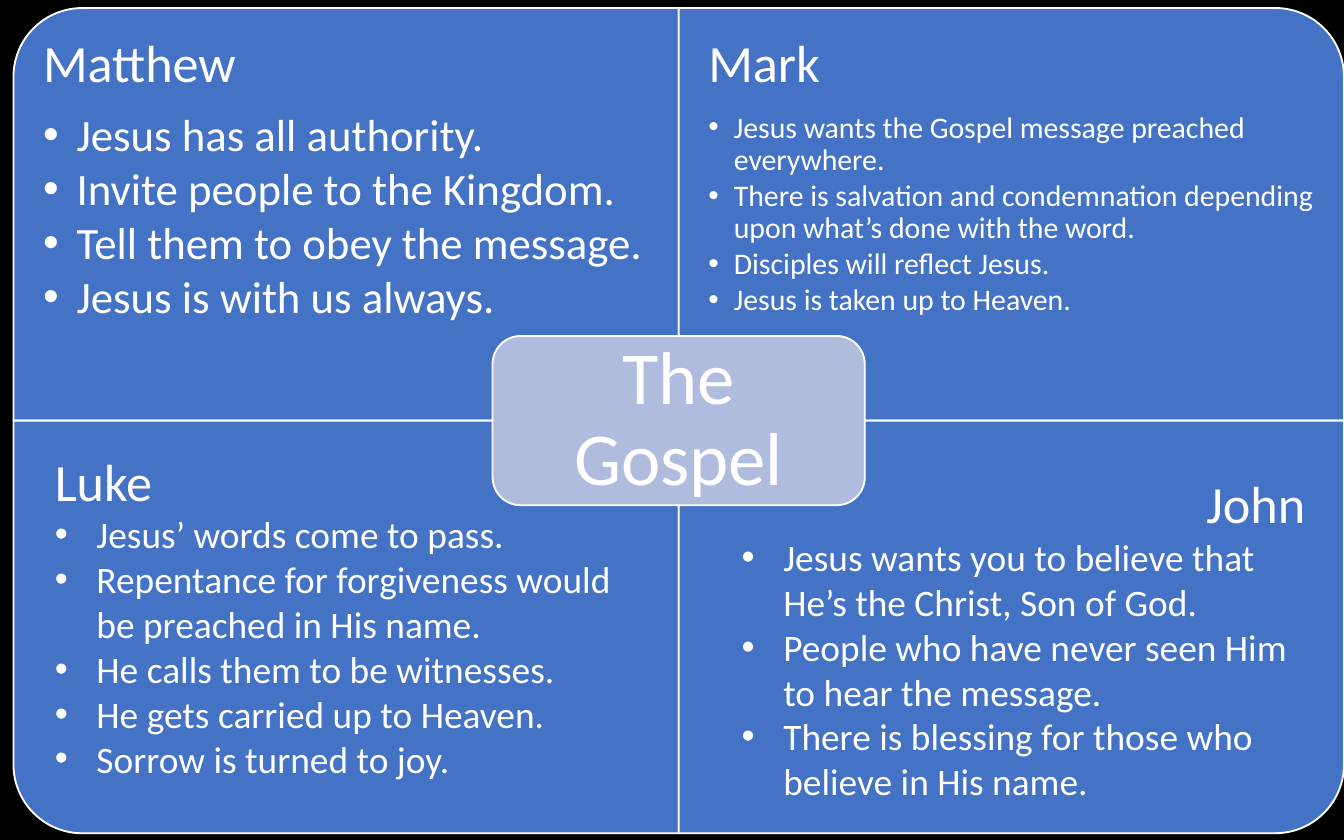
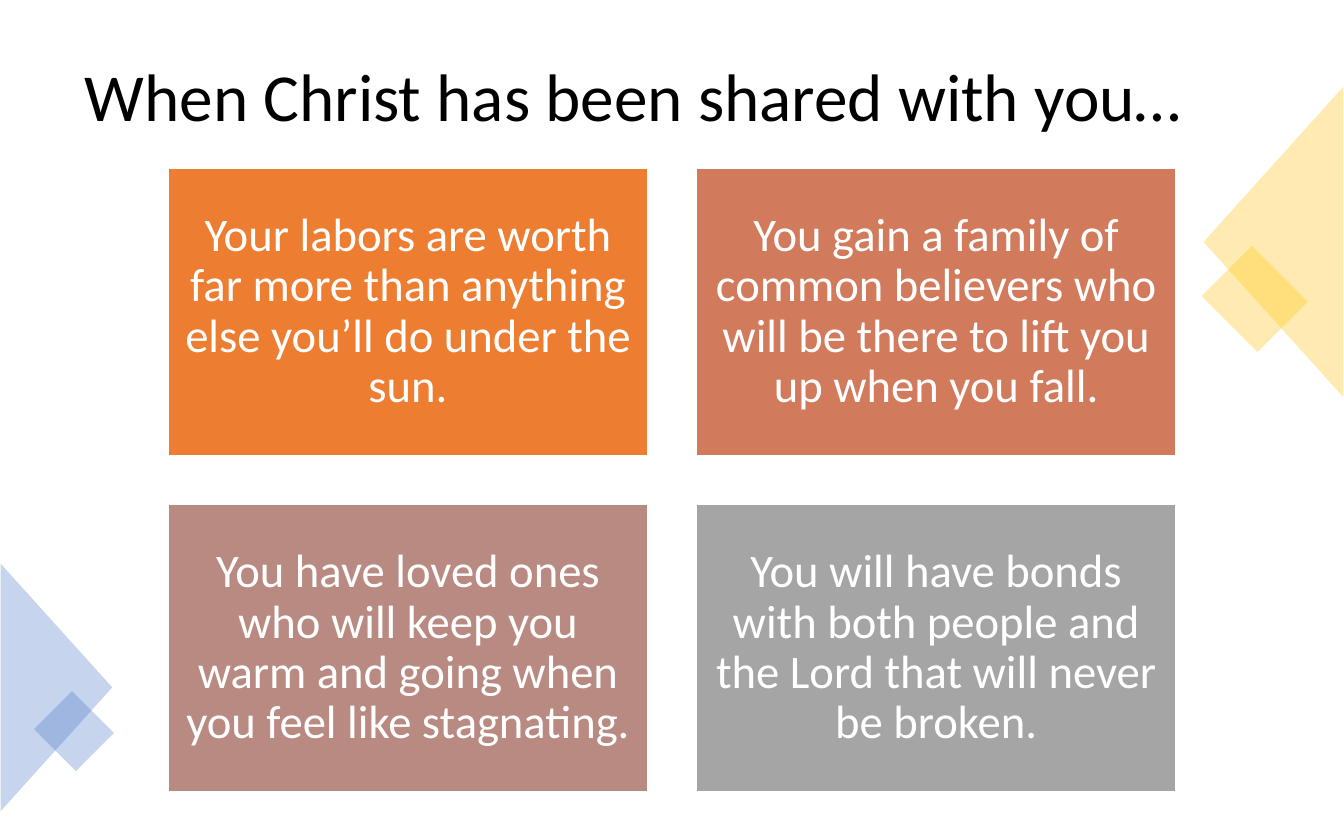
from dataclasses import dataclass

from lxml.etree import SubElement
from pptx import Presentation
from pptx.dml.color import RGBColor
from pptx.enum.shapes import MSO_SHAPE
from pptx.enum.text import MSO_ANCHOR, MSO_AUTO_SIZE, PP_ALIGN
from pptx.oxml.ns import qn
from pptx.util import Inches, Pt


@dataclass(frozen=True)
class Theme:
    font: str = "Calibri"
    white: str = "FFFFFF"
    black: str = "000000"
    blue: str = "4472C4"
    pale_blue: str = "B0BCDE"
    gold: str = "FFC000"
    heading: float = 28
    hub: float = 40
    title: float = 36
    tile: float = 25
    outline: float = 1
    tight: float = 0.9
    ornament_opacity: int = 30


THEME = Theme()
WIDTH, HEIGHT = 10, 6.25

# Quadrants of the first slide, by row; the rotation turns the round corner outwards.
PANEL_LEFT, PANEL_TOP, PANEL_WIDTH, PANEL_HEIGHT = 0.1, 0.06, 4.95, 3.07
PANEL_ROTATIONS = [270, 0, 180, 90]
TIGHT_LIST = dict(insets=(0.22, 0.22), line_spacing=THEME.tight, after_heading=0.35, after_item=0.13)
PLAIN_LIST = dict(insets=(0.1, 0.05), auto_size=MSO_AUTO_SIZE.SHAPE_TO_FIT_TEXT)
GOSPELS = [
    dict(
        name="Matthew", area=(PANEL_LEFT, PANEL_TOP, PANEL_WIDTH, 2.3), size=24, indent=0.25,
        points=[
            "Jesus has all authority.",
            "Invite people to the Kingdom.",
            "Tell them to obey the message.",
            "Jesus is with us always.",
        ], **TIGHT_LIST),
    dict(
        name="Mark", area=(PANEL_LEFT + PANEL_WIDTH, PANEL_TOP, PANEL_WIDTH, 2.3), size=16, indent=0.19,
        points=[
            "Jesus wants the Gospel message preached everywhere.",
            "There is salvation and condemnation depending upon what’s done with the word.",
            "Disciples will reflect Jesus.",
            "Jesus is taken up to Heaven.",
        ], **TIGHT_LIST),
    dict(
        name="Luke", area=(0.31, 3.29, 4.6, 2.59), size=20, indent=0.31,
        points=[
            "Jesus’ words come to pass.",
            "Repentance for forgiveness would be preached in His name.",
            "He calls them to be witnesses.",
            "He gets carried up to Heaven.",
            "Sorrow is turned to joy.",
        ], **PLAIN_LIST),
    dict(
        name="John", area=(5.42, 3.46, 4.39, 2.59), size=20, indent=0.31, heading_align=PP_ALIGN.RIGHT,
        points=[
            "Jesus wants you to believe that He’s the Christ, Son of God.",
            "People who have never seen Him to hear the message.",
            "There is blessing for those who believe in His name.",
        ], **PLAIN_LIST),
]
HUB_TEXT, HUB_WIDTH, HUB_HEIGHT = "The Gospel", 2.77, 1.26

TITLE = "When Christ has been shared with you…"
TITLE_AREA = (0.53, 0.22, 8.94, 1.04)
TILES = [
    ("Your labors are worth far more than anything else you’ll do under the sun.", "ED7D31"),
    ("You gain a family of common believers who will be there to lift you up when you fall.", "D17B5C"),
    ("You have loved ones who will keep you warm and going when you feel like stagnating.", "B98A82"),
    ("You will have bonds with both people and the Lord that will never be broken.", "A5A5A5"),
]
TILE_LEFT, TILE_TOP, TILE_GAP = WIDTH / 8, HEIGHT / 5, 0.36
TILE_WIDTH = (WIDTH - 2 * TILE_LEFT - TILE_GAP) / 2
TILE_HEIGHT = 0.6 * TILE_WIDTH
ORNAMENTS = [
    (MSO_SHAPE.RECTANGLE, (9.04, 1.96, 0.59, 0.53), 45, THEME.gold),
    (MSO_SHAPE.ISOSCELES_TRIANGLE, (8.32, 1.28, 2.31, 1.04), 270, THEME.gold),
    (MSO_SHAPE.ISOSCELES_TRIANGLE, (-0.5, 4.7, 1.84, 0.83), 90, THEME.blue),
    (MSO_SHAPE.RECTANGLE, (0.33, 5.24, 0.44, 0.4), 45, THEME.blue),
]


def rgb(color):
    return RGBColor.from_string(color)


def inches(area):
    return [Inches(length) for length in area]


def add_page(deck, layout, background):
    page = deck.slides.add_slide(deck.slide_layouts.get_by_name(layout))
    page.background.fill.solid()
    page.background.fill.fore_color.rgb = rgb(background)
    return page


def add_shape(page, preset, area, color, rotation=0, outlined=True):
    shape = page.shapes.add_shape(preset, *inches(area))
    shape.shadow.inherit = False
    shape.rotation = rotation
    shape.fill.solid()
    shape.fill.fore_color.rgb = rgb(color)
    if outlined:
        shape.line.color.rgb = rgb(THEME.white)
        shape.line.width = Pt(THEME.outline)
    else:
        shape.line.fill.background()
    return shape


def set_frame(frame, insets, **format_values):
    """Apply (horizontal, vertical) insets and any other frame attributes."""
    across, down = inches(insets)
    values = dict(margin_left=across, margin_right=across, margin_top=down, margin_bottom=down,
                  word_wrap=True, **format_values)
    for name, value in values.items():
        setattr(frame, name, value)


def write(para, text, size, color=THEME.white, **format_values):
    for name, value in format_values.items():
        setattr(para, name, value)
    span = para.add_run()
    span.text = text
    span.font.name = THEME.font
    span.font.size = Pt(size)
    span.font.color.rgb = rgb(color)


def add_bullet(para, indent):
    properties = para._p.get_or_add_pPr()
    properties.set("marL", str(Inches(indent)))
    properties.set("indent", str(-Inches(indent)))
    SubElement(properties, qn("a:buFont"), typeface="Arial")
    SubElement(properties, qn("a:buChar"), char="•")


def add_gospel(page, name, area, size, indent, points, insets, line_spacing=1.0, after_heading=0,
               after_item=0, heading_align=PP_ALIGN.LEFT, auto_size=MSO_AUTO_SIZE.NONE):
    """Add a heading with bullets; spaces after are shares of the type size."""
    frame = page.shapes.add_textbox(*inches(area)).text_frame
    set_frame(frame, insets, auto_size=auto_size)
    write(frame.paragraphs[0], name, THEME.heading, alignment=heading_align,
          line_spacing=line_spacing, space_after=Pt(after_heading * THEME.heading))
    for point in points:
        para = frame.add_paragraph()
        add_bullet(para, indent)
        write(para, point, size, line_spacing=line_spacing, space_after=Pt(after_item * size))


def write_centred(shape, text, size, inset):
    set_frame(shape.text_frame, (inset, inset), vertical_anchor=MSO_ANCHOR.MIDDLE)
    write(shape.text_frame.paragraphs[0], text, size,
          alignment=PP_ALIGN.CENTER, line_spacing=THEME.tight)


def add_panel(page, index, rotation):
    """Add a quadrant; a quarter turn swaps the sides about the same centre."""
    row, column = divmod(index, 2)
    center_x = PANEL_LEFT + (column + 0.5) * PANEL_WIDTH
    center_y = PANEL_TOP + (row + 0.5) * PANEL_HEIGHT
    width, height = PANEL_WIDTH, PANEL_HEIGHT
    if rotation % 180:
        width, height = height, width
    area = (center_x - width / 2, center_y - height / 2, width, height)
    add_shape(page, MSO_SHAPE.ROUND_1_RECTANGLE, area, THEME.blue, rotation)


def build_gospels(deck):
    page = add_page(deck, "Blank", THEME.black)
    for index, rotation in enumerate(PANEL_ROTATIONS):
        add_panel(page, index, rotation)
    hub_area = (PANEL_LEFT + PANEL_WIDTH - HUB_WIDTH / 2, PANEL_TOP + PANEL_HEIGHT - HUB_HEIGHT / 2,
                HUB_WIDTH, HUB_HEIGHT)
    hub = add_shape(page, MSO_SHAPE.ROUNDED_RECTANGLE, hub_area, THEME.pale_blue)
    write_centred(hub, HUB_TEXT, THEME.hub, 0.17)
    for gospel in GOSPELS:
        add_gospel(page, **gospel)


def build_blessings(deck):
    page = add_page(deck, "Title Only", THEME.white)
    title = page.shapes.title
    title.left, title.top, title.width, title.height = inches(TITLE_AREA)
    set_frame(title.text_frame, (0.1, 0.05), vertical_anchor=MSO_ANCHOR.MIDDLE)
    write(title.text_frame.paragraphs[0], TITLE, THEME.title, THEME.black,
          alignment=PP_ALIGN.LEFT, line_spacing=THEME.tight)
    for preset, area, rotation, color in ORNAMENTS:
        ornament = add_shape(page, preset, area, color, rotation, outlined=False)
        tint = ornament._element.spPr.find(qn("a:solidFill"))[0]
        SubElement(tint, qn("a:alpha"), val=str(THEME.ornament_opacity * 1000))
    for index, (text, color) in enumerate(TILES):
        row, column = divmod(index, 2)
        area = (TILE_LEFT + column * (TILE_WIDTH + TILE_GAP), TILE_TOP + row * (TILE_HEIGHT + TILE_GAP),
                TILE_WIDTH, TILE_HEIGHT)
        write_centred(add_shape(page, MSO_SHAPE.RECTANGLE, area, color), text, THEME.tile, 0.1)


def main():
    deck = Presentation()
    deck.slide_width, deck.slide_height = inches((WIDTH, HEIGHT))
    build_gospels(deck)
    build_blessings(deck)
    deck.save("out.pptx")


if __name__ == "__main__":
    main()
